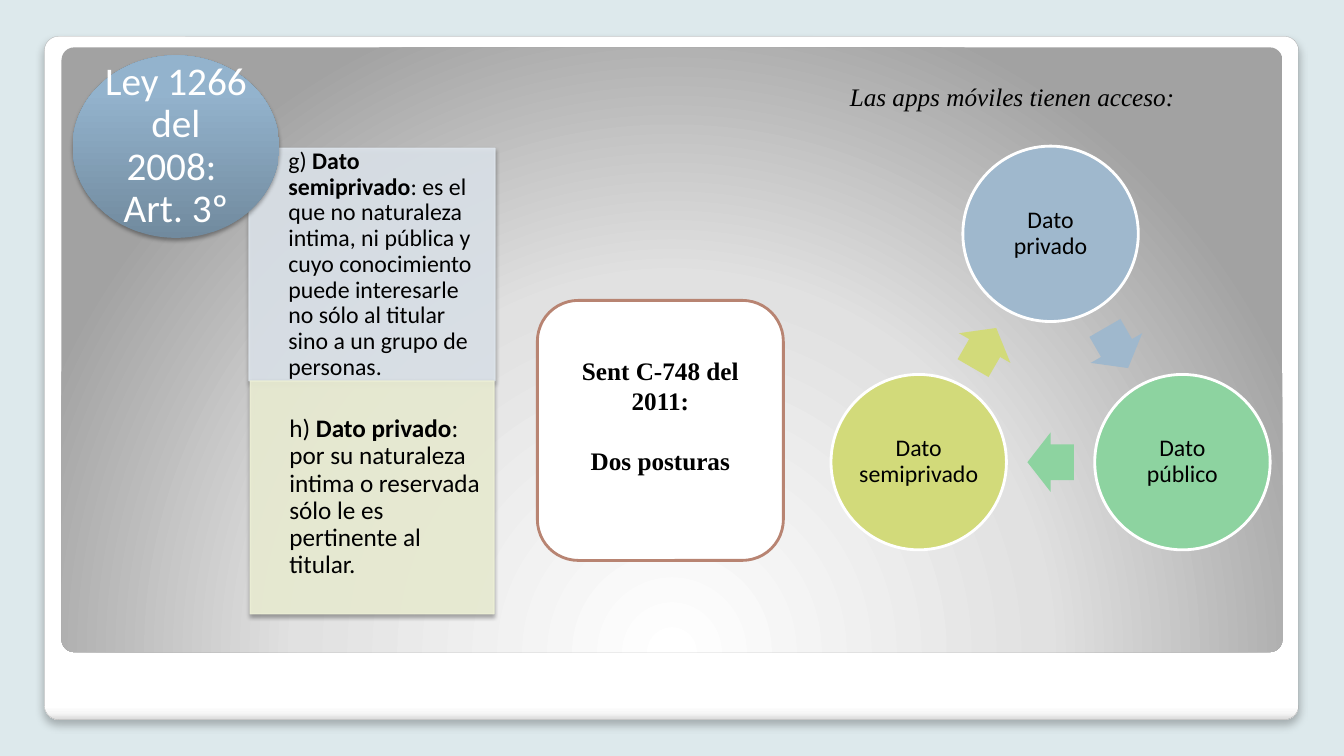
from dataclasses import dataclass
from math import cos, radians, sin

from lxml import etree
from pptx import Presentation
from pptx.dml.color import RGBColor
from pptx.enum.shapes import MSO_SHAPE
from pptx.enum.text import MSO_ANCHOR, MSO_AUTO_SIZE, PP_ALIGN
from pptx.oxml.ns import qn
from pptx.util import Inches, Pt

RECT, ROUNDED = MSO_SHAPE.RECTANGLE, MSO_SHAPE.ROUNDED_RECTANGLE
OVAL, ARROW = MSO_SHAPE.OVAL, MSO_SHAPE.RIGHT_ARROW
LEFT, CENTER = PP_ALIGN.LEFT, PP_ALIGN.CENTER
TOP, MIDDLE = MSO_ANCHOR.TOP, MSO_ANCHOR.MIDDLE


@dataclass(frozen=True)
class Theme:
    sans: str = "Calibri"
    serif: str = "Times New Roman"
    background: str = "DDE9EC"
    white: str = "FFFFFF"
    black: str = "000000"
    frame_line: str = "A4A4A4"
    ruling_line: str = "B88472"
    semiprivate_card: str = "DFE6ED"
    private_card: str = "EEF1D7"
    blue: str = "9FB8CD"
    green: str = "8DD3A0"
    lime: str = "D2DA7A"
    frame_stops: tuple = ((0, "FFFFFF"), (98, "FFFFFF"), (99, "F7F7F7"), (100, "DADADA"))
    panel_stops: tuple = ((0, "FFFFFF"), (55, "E1E1E1"), (100, "A2A2A2"))
    law_stops: tuple = ((0, "718A9E"), (80, "93B3CD"), (100, "93B4CF"))
    law_size: float = 28
    text_size: float = 18
    small_size: float = 17


THEME = Theme()


def add_node(parent, tag, **attributes):
    node = etree.SubElement(parent, qn(tag))
    for name, value in attributes.items():
        node.set(name, str(value))
    return node


def set_alpha(color_node, percent):
    add_node(color_node, "a:alpha", val=int(percent * 1000))


def set_gradient(shape, stops, angle=None, center=None):
    shape.fill.gradient()
    gradient = shape.element.spPr.find(qn("a:gradFill"))
    gradient.clear()
    stop_list = add_node(gradient, "a:gsLst")
    for position, color in stops:
        stop = add_node(stop_list, "a:gs", pos=position * 1000)
        add_node(stop, "a:srgbClr", val=color)
    if center:
        path = add_node(gradient, "a:path", path="circle")
        sides = {side: value * 1000 for side, value in zip("ltrb", center)}
        add_node(path, "a:fillToRect", **sides)
    else:
        add_node(gradient, "a:lin", ang=angle * 60000, scaled=0)


def set_shadow(shape, opacity, blur, distance):
    effects = shape.element.spPr.find(qn("a:effectLst"))
    shadow = add_node(effects, "a:outerShdw", blurRad=Pt(blur), dist=Pt(distance),
                      dir=90 * 60000, algn="t", rotWithShape=0)
    set_alpha(add_node(shadow, "a:srgbClr", val=THEME.black), opacity)


def add_figure(page, kind, at, fill=None, line=None, width=1, adjust=()):
    shape = page.shapes.add_shape(kind, *map(Inches, at))
    shape.shadow.inherit = False
    for index, value in enumerate(adjust):
        shape.adjustments[index] = value
    if fill:
        shape.fill.solid()
        shape.fill.fore_color.rgb = RGBColor.from_string(fill)
    if line:
        shape.line.color.rgb = RGBColor.from_string(line)
        shape.line.width = Pt(width)
    else:
        shape.line.fill.background()
    return shape


def write_text(shape, paragraphs, size, font=THEME.sans, color=THEME.black, align=CENTER,
               anchor=MIDDLE, insets=(0, 0, 0, 0), spacing=0.9, gap=0, italic=False):
    """Each paragraph is a list of (text, bold) spans."""
    frame = shape.text_frame
    frame.word_wrap = True
    frame.auto_size = MSO_AUTO_SIZE.NONE
    frame.vertical_anchor = anchor
    frame.margin_left, frame.margin_top, frame.margin_right, frame.margin_bottom = map(Inches, insets)
    for index, spans in enumerate(paragraphs):
        para = frame.add_paragraph() if index else frame.paragraphs[0]
        para.alignment = align
        para.line_spacing = spacing
        para.space_before = Pt(gap if index else 0)
        for text, bold in spans:
            span = para.add_run()
            span.text = text
            span.font.name = font
            span.font.size = Pt(size)
            span.font.bold = bold
            span.font.italic = italic
            span.font.color.rgb = RGBColor.from_string(color)


def add_label(page, at, paragraphs, size, **style):
    box = page.shapes.add_textbox(*map(Inches, at))
    write_text(box, paragraphs, size, **style)


def add_backdrop(page):
    page.background.fill.solid()
    page.background.fill.fore_color.rgb = RGBColor.from_string(THEME.background)
    frame = add_figure(page, ROUNDED, (0.44, 0.36, 12.44, 6.78), line=THEME.frame_line,
                       width=0.16, adjust=(0.021,))
    set_gradient(frame, THEME.frame_stops, angle=90)
    set_shadow(frame, 25, 6, 4)
    panel = add_figure(page, ROUNDED, (0.61, 0.47, 12.11, 6), adjust=(0.021,))
    set_gradient(panel, THEME.panel_stops, center=(50, 175, 50, -75))


def add_definition(page, left, top, width, color, spans, size, inset):
    height = 2.31
    card = add_figure(page, RECT, (left, top, width, height), color, color, 0.75)
    for color_node in card.element.spPr.iter(qn("a:srgbClr")):
        set_alpha(color_node, 90)
    set_shadow(card, 35, 3.1, 1.8)
    add_label(page, (left + 0.39, top, width - 0.39, height), [spans], size,
              align=LEFT, insets=(0, inset, inset, inset))


def add_law(page):
    disc = add_figure(page, OVAL, (0.72, 0.55, 2.05, 1.81))
    set_gradient(disc, THEME.law_stops, angle=270)
    set_shadow(disc, 35, 3.1, 1.8)
    title = page.shapes.title
    title.left, title.top, title.width, title.height = map(Inches, (1.02, 0.81, 1.45, 1.28))
    write_text(title, [[("Ley 1266 del 2008:  Art. 3º", False)]], THEME.law_size, color=THEME.white)
    title.element.getparent().append(title.element)  # bring in front of the disc


def add_cycle(page, steps):
    center_x, center_y, radius = 10.42, 3.83, 1.51
    disc, label, arrow_width, arrow_height = 1.74, 1.23, 0.46, 0.59
    turn = 360 / len(steps)

    def place(angle, distance, width, height):
        x = center_x + distance * sin(radians(angle))
        y = center_y - distance * cos(radians(angle))
        return x - width / 2, y - height / 2, width, height

    for index, (text, color) in enumerate(steps):
        angle = index * turn
        add_figure(page, OVAL, place(angle, radius, disc, disc), color, THEME.white, 2)
        add_label(page, place(angle, radius, label, label), [[(text, False)]],
                  THEME.small_size, insets=(0.02,) * 4)
        # The arrow sits halfway along the chord to the next disc
        halfway = radius * cos(radians(turn / 2))
        arrow = add_figure(page, ARROW, place(angle + turn / 2, halfway, arrow_width, arrow_height),
                           color, adjust=(0.6, 0.5))
        arrow.rotation = angle + turn / 2


def main():
    deck = Presentation()
    deck.slide_width, deck.slide_height = Inches(13.33), Inches(7.5)
    page = deck.slides.add_slide(deck.slide_layouts[5])
    add_backdrop(page)

    # Definitions from the law
    add_definition(page, 2.47, 1.47, 2.44, THEME.semiprivate_card, [
        ("g) ", False), ("Dato semiprivado", True),
        (": es el que no naturaleza intima, ni pública y cuyo conocimiento puede "
         "interesarle no sólo al titular sino a un grupo de personas.", False),
    ], THEME.small_size, 0.13)
    add_definition(page, 2.48, 3.78, 2.42, THEME.private_card, [
        ("h) ", False), ("Dato privado", True),
        (": por su naturaleza intima o reservada sólo le es pertinente al titular.", False),
    ], THEME.text_size, 0.14)
    add_law(page)

    # Data types the apps reach
    add_cycle(page, [("Dato privado", THEME.blue), ("Dato público", THEME.green),
                     ("Dato semiprivado", THEME.lime)])
    add_label(page, (8.33, 0.76, 3.47, 0.4), [[("Las apps móviles tienen acceso:", False)]],
              THEME.text_size, font=THEME.serif, align=LEFT, anchor=TOP,
              insets=(0.1, 0.05, 0.1, 0.05), spacing=1, italic=True)

    # Court ruling
    ruling = add_figure(page, ROUNDED, (5.33, 2.98, 2.44, 2.58), THEME.white, THEME.ruling_line, 2)
    write_text(ruling, [[("Sent C-748 del 2011:", True)], [("Dos posturas", True)]],
               THEME.text_size, font=THEME.serif, insets=(0.1, 0.05, 0.1, 0.35), spacing=1, gap=21)

    deck.save("out.pptx")


if __name__ == "__main__":
    main()
